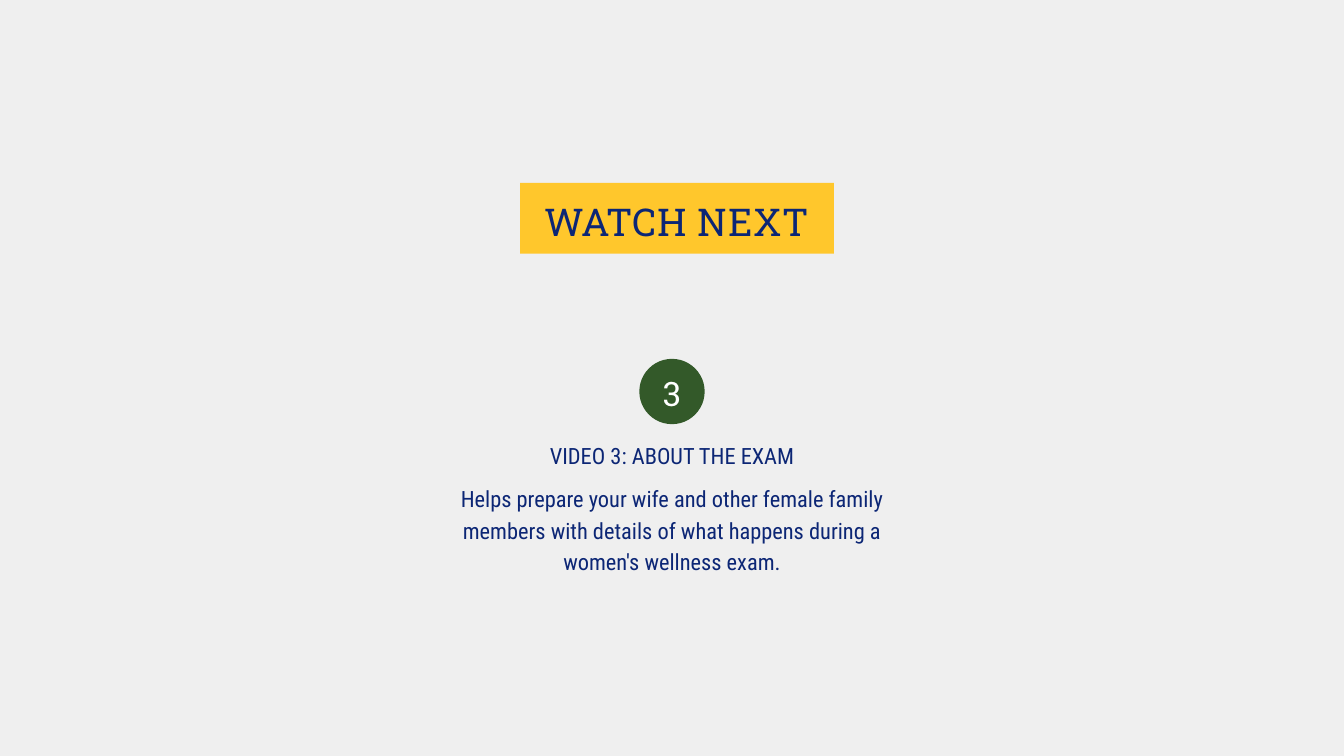
from pptx import Presentation
from pptx.dml.color import RGBColor
from pptx.enum.shapes import MSO_SHAPE as Shape
from pptx.enum.text import MSO_ANCHOR as Anchor, MSO_AUTO_SIZE as Fit, PP_ALIGN as Align
from pptx.util import Pt

WIDE, HIGH = 1440, 810


def color(code):
    return RGBColor.from_string(code)


class Deck:
    back, navy, gold, green, white = "EFEFEF", "0C2675", "FFC72C", "335929", "FFFFFF"
    slab, sans = "Roboto Slab", "Roboto Condensed"

    def __init__(self, slide):
        self.slide = slide
        fill = slide.background.fill
        fill.solid()
        fill.fore_color.rgb = color(self.back)

    def shape(self, kind, box, code):
        item = self.slide.shapes.add_shape(kind, *map(Pt, box))
        item.shadow.inherit = False
        item.fill.solid()
        item.fill.fore_color.rgb = color(code)
        item.line.fill.background()

    def style(self, item, words, size, font, code, lead):
        """Set centred text without margins, with a fixed line pitch."""
        frame = item.text_frame
        frame.text = words
        frame.word_wrap = True
        frame.auto_size = Fit.NONE
        frame.vertical_anchor = Anchor.TOP
        frame.margin_left = frame.margin_right = 0
        frame.margin_top = frame.margin_bottom = 0
        para = frame.paragraphs[0]
        para.alignment = Align.CENTER
        para.line_spacing = Pt(lead)
        para.space_before = Pt(0)
        run = para.runs[0]
        run.font.size = Pt(size)
        run.font.name = font
        run.font.color.rgb = color(code)
        return run

    def text(self, box, *look):
        self.style(self.slide.shapes.add_textbox(*map(Pt, box)), *look)

    def title(self, box, *look):
        """Place the title in front of the shapes drawn so far."""
        item = self.slide.shapes.title
        item.left, item.top, item.width, item.height = map(Pt, box)
        run = self.style(item, *look)
        run.font._element.set("spc", "80")
        tree = item.element.getparent()
        tree.append(item.element)


def main():
    show = Presentation()
    show.slide_width, show.slide_height = Pt(WIDE), Pt(HIGH)
    deck = Deck(show.slides.add_slide(show.slide_layouts[5]))
    mid = WIDE / 2

    # Numbered badge
    size = 70
    deck.shape(Shape.OVAL, (mid - size / 2, 384.5, size, size), deck.green)
    deck.text((mid - 12, 392.4, 24, 47.5), "3", 36, deck.slab, deck.white, 50.4)

    # Video name and summary
    span = 467.3
    for top, high, words in (
        (468.7, 31.7, "VIDEO 3: ABOUT THE EXAM"),
        (515.5, 97.9, "Helps prepare your wife and other female family members "
                      "with details of what happens during a women's wellness exam."),
    ):
        deck.text((mid - span / 2, top, span, high), words, 24, deck.sans, deck.navy, 33.6)

    # Heading on its banner
    left, wide = 557.3, 336.2
    deck.shape(Shape.RECTANGLE, (left, 195.9, wide, 76), deck.gold)
    deck.title((left, 203.8, wide, 54.7), "WATCH NEXT", 41, deck.slab, deck.navy, 57.4)

    show.save("out.pptx")


if __name__ == "__main__":
    main()
